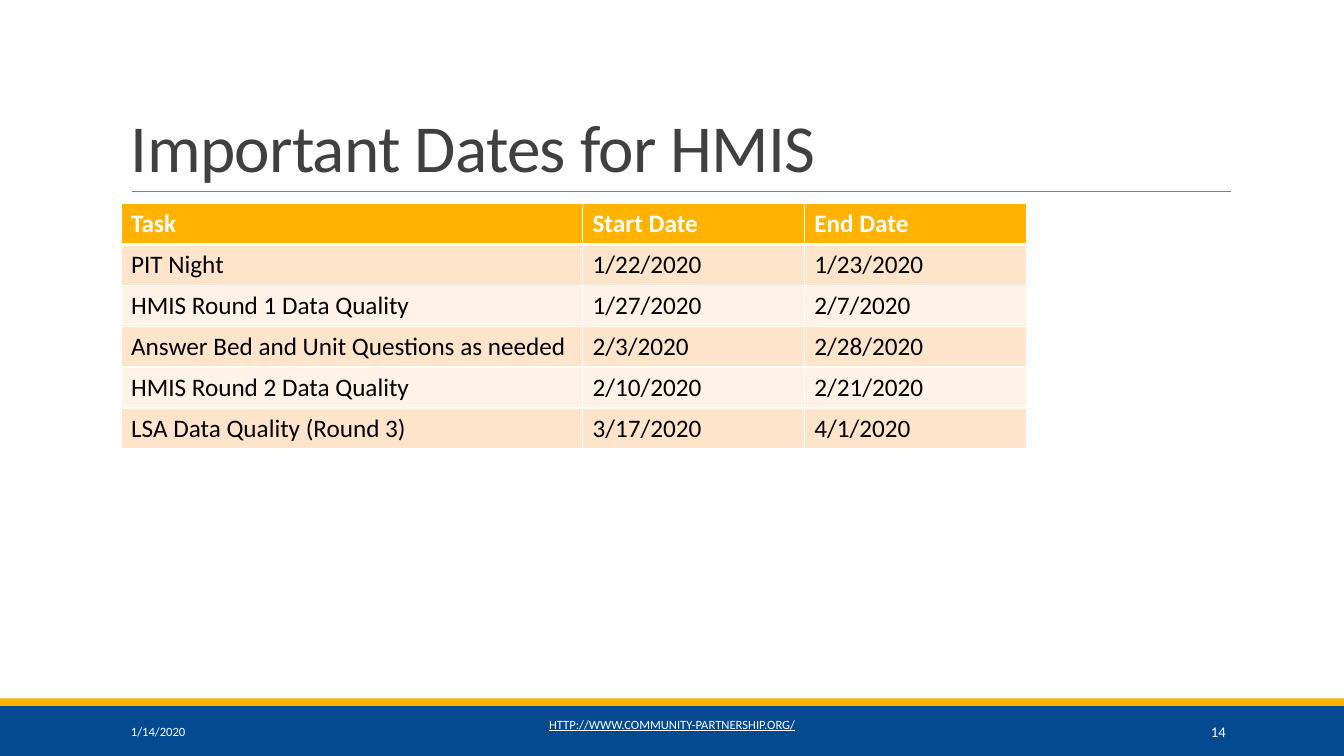
from dataclasses import dataclass

from lxml import etree
from pptx import Presentation
from pptx.dml.color import RGBColor
from pptx.enum.shapes import MSO_CONNECTOR, MSO_SHAPE
from pptx.enum.text import MSO_ANCHOR, PP_ALIGN
from pptx.oxml.ns import qn
from pptx.util import Cm, Pt

RECTANGLE = MSO_SHAPE.RECTANGLE
STRAIGHT = MSO_CONNECTOR.STRAIGHT
TOP, MIDDLE, BOTTOM = MSO_ANCHOR.TOP, MSO_ANCHOR.MIDDLE, MSO_ANCHOR.BOTTOM
LEFT, CENTER, RIGHT = PP_ALIGN.LEFT, PP_ALIGN.CENTER, PP_ALIGN.RIGHT

SLIDE_WIDTH, SLIDE_HEIGHT = 33.87, 19.05
MARGIN = 3.05
FOOTER_TOP, FOOTER_HEIGHT = 17.93, 1.02
COLUMN_WIDTHS = (11.63, 5.59, 5.59)
ROW_HEIGHT = 1.03

DATES = (
    ("Task", "Start Date", "End Date"),
    ("PIT Night", "1/22/2020", "1/23/2020"),
    ("HMIS Round 1 Data Quality", "1/27/2020", "2/7/2020"),
    ("Answer Bed and Unit Questions as needed", "2/3/2020", "2/28/2020"),
    ("HMIS Round 2 Data Quality", "2/10/2020", "2/21/2020"),
    ("LSA Data Quality (Round 3)", "3/17/2020", "4/1/2020"),
)


@dataclass(frozen=True)
class Theme:
    """Colours, font and type sizes of the slide."""

    font: str = "Calibri"
    blue: str = "034A90"
    gold: str = "FFB200"
    white: str = "FFFFFF"
    black: str = "000000"
    heading: str = "404040"
    rule: str = "808080"
    bands: tuple = ("FFF2E7", "FFE4CC")
    title_size: float = 48
    table_size: float = 18
    footer_size: float = 9
    number_size: float = 10.5


class SlideBuilder:
    """Draws styled elements on the current slide."""

    def __init__(self, slide, theme):
        """Keep the slide and its theme."""
        self.shapes = slide.shapes
        self.theme = theme

    def add_span(self, para, text, size, color, bold=False, underline=False):
        """Add one styled run to a paragraph."""
        span = para.add_run()
        span.text = text
        span.font.name = self.theme.font
        span.font.size = Pt(size)
        span.font.bold = bold
        span.font.underline = underline
        span.font.color.rgb = RGBColor.from_string(color)
        return span

    def bar(self, top, height, color):
        """Add a filled bar across the slide."""
        bar = self.shapes.add_shape(RECTANGLE, 0, Cm(top), Cm(SLIDE_WIDTH), Cm(height))
        bar.shadow.inherit = False
        bar.fill.solid()
        bar.fill.fore_color.rgb = RGBColor.from_string(color)
        bar.line.fill.background()

    def rule(self, left, right, top):
        """Add a thin horizontal line."""
        rule = self.shapes.add_connector(STRAIGHT, Cm(left), Cm(top), Cm(right), Cm(top))
        rule.line.color.rgb = RGBColor.from_string(self.theme.rule)
        rule.line.width = Pt(0.5)
        etree.SubElement(rule._element.spPr, qn("a:effectLst"))

    def text(self, left, top, width, height, anchor, align):
        """Add a wrapping text box and return its first paragraph."""
        box = self.shapes.add_textbox(Cm(left), Cm(top), Cm(width), Cm(height))
        box.text_frame.word_wrap = True
        box.text_frame.vertical_anchor = anchor
        para = box.text_frame.paragraphs[0]
        para.alignment = align
        return para

    def title(self, text):
        """Add the slide title."""
        para = self.text(MARGIN, 0.79, 27.94, 4.04, BOTTOM, LEFT)
        para.line_spacing = 0.85
        span = self.add_span(para, text, self.theme.title_size, self.theme.heading)
        span.font._element.set("spc", "-50")

    def footer(self, text, left, width, align, size, anchor=MIDDLE, underline=False):
        """Add a white text to the footer bar."""
        para = self.text(left, FOOTER_TOP, width, FOOTER_HEIGHT, anchor, align)
        self.add_span(para, text, size, self.theme.white, underline=underline)

    def border(self, cell, side, width):
        """Add a white border to one side of a cell."""
        line = etree.SubElement(cell._tc.get_or_add_tcPr(), qn(f"a:ln{side}"), w=str(Pt(width)))
        fill = etree.SubElement(line, qn("a:solidFill"))
        etree.SubElement(fill, qn("a:srgbClr"), val=self.theme.white)

    def cell(self, cell, text, row):
        """Fill one table cell and add its text."""
        header = row == 0
        widths = {"L": 1, "R": 1, "T": 3 if row == 1 else 1, "B": 3 if header else 1}
        for side, width in widths.items():
            self.border(cell, side, width)
        color = self.theme.gold if header else self.theme.bands[row % 2]
        cell.fill.solid()
        cell.fill.fore_color.rgb = RGBColor.from_string(color)
        ink = self.theme.white if header else self.theme.black
        para = cell.text_frame.paragraphs[0]
        self.add_span(para, text, self.theme.table_size, ink, bold=header)

    def table(self, rows, left, top):
        """Add the table of dates."""
        width, height = sum(COLUMN_WIDTHS), ROW_HEIGHT * len(rows)
        frame = self.shapes.add_table(
            len(rows), len(COLUMN_WIDTHS), Cm(left), Cm(top), Cm(width), Cm(height)
        )
        for column, column_width in zip(frame.table.columns, COLUMN_WIDTHS):
            column.width = Cm(column_width)
        for row, texts in enumerate(rows):
            frame.table.rows[row].height = Cm(ROW_HEIGHT)
            for column, text in enumerate(texts):
                self.cell(frame.table.cell(row, column), text, row)


def main():
    """Build and save the deck."""
    deck = Presentation()
    deck.slide_width, deck.slide_height = Cm(SLIDE_WIDTH), Cm(SLIDE_HEIGHT)
    theme = Theme()
    page = SlideBuilder(deck.slides.add_slide(deck.slide_layouts[6]), theme)
    page.bar(17.78, 1.27, theme.blue)
    page.bar(17.6, 0.18, theme.gold)
    page.rule(3.33, 31.01, 4.83)
    page.title("Important Dates for HMIS")
    page.table(DATES, MARGIN, 5.13)
    page.footer("1/14/2020", MARGIN, 6.86, LEFT, theme.footer_size)
    page.footer("HTTP://WWW.COMMUNITY-PARTNERSHIP.ORG/", 10.24, 13.39, CENTER,
                theme.footer_size, TOP, underline=True)
    page.footer("14", 27.51, 3.63, RIGHT, theme.number_size)
    deck.save("out.pptx")


if __name__ == "__main__":
    main()
